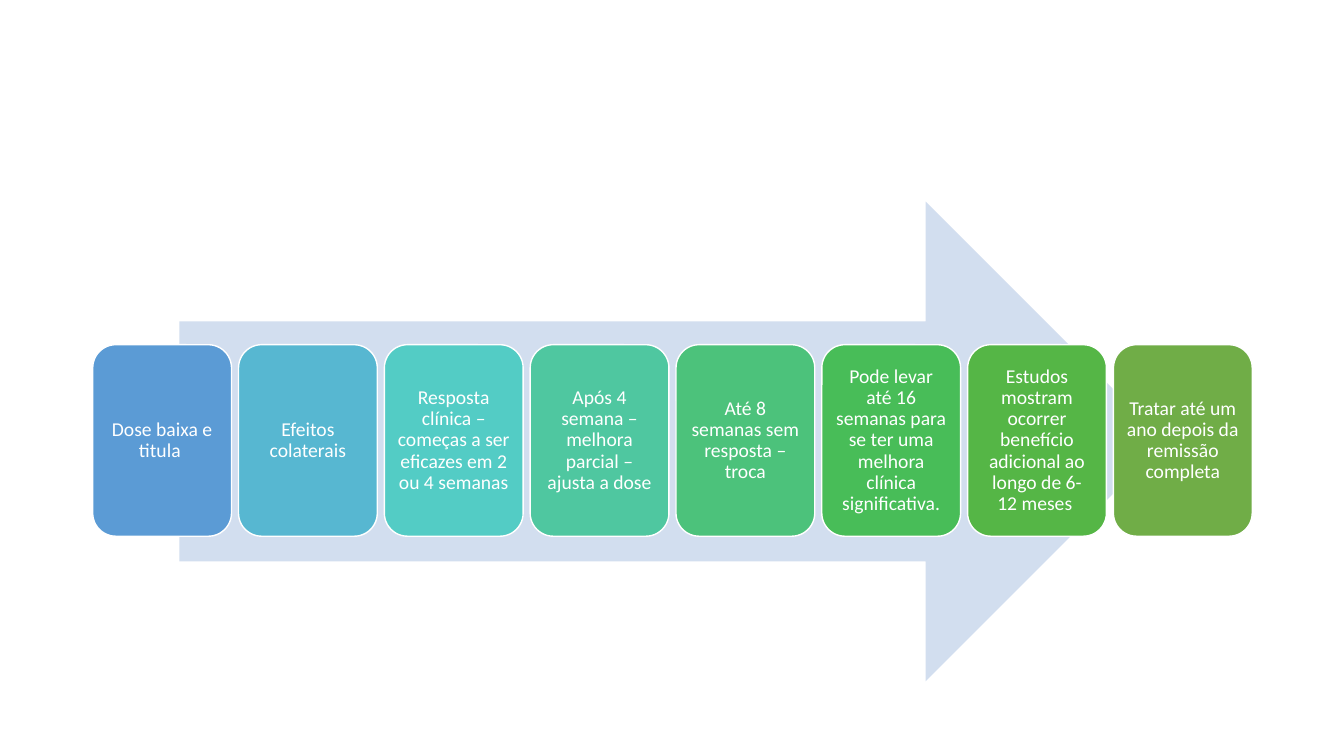
from dataclasses import dataclass

from pptx import Presentation
from pptx import util as u
from pptx.dml.color import RGBColor
from pptx.enum import shapes, text


@dataclass(frozen=True)
class Theme:
    font: str = "Calibri"
    step_size: float = 14
    white: str = "FFFFFF"
    arrow: str = "D2DEEF"
    steps: tuple = ("5B9BD5", "57B7D1", "53CCC5", "4FC7A0",
                    "4CC27B", "48BD58", "55B646", "70AD47")


@dataclass(frozen=True)
class Grid:
    """Equal columns in one row, in inches."""
    left: float = 0.92
    top: float = 3.42
    width: float = 11.5
    height: float = 1.9
    gap: float = 0.07
    columns: int = 8

    def cell(self, column):
        cell_width = (self.width - self.gap * (self.columns - 1)) / self.columns
        return (self.left + column * (cell_width + self.gap), self.top,
                cell_width, self.height)


TREATMENT_STEPS = (
    "Dose baixa e titula ",
    "Efeitos colaterais",
    "Resposta clínica – começas a ser eficazes em 2 ou 4 semanas",
    "Após 4 semana – melhora parcial – ajusta a dose",
    "Até 8 semanas sem resposta – troca",
    "Pode levar até 16 semanas para se ter uma melhora clínica significativa.",
    "Estudos mostram ocorrer benefício adicional ao longo de 6- 12 meses ",
    "Tratar até um ano depois da remissão completa",
)


def apply(target, formats):
    for name, value in formats.items():
        setattr(target, name, value)


class TimelineSlide:
    def __init__(self, deck, theme, grid):
        self.theme, self.grid = theme, grid
        slide = deck.slides.add_slide(deck.slide_layouts[6])
        self.timeline = slide.shapes.add_group_shape().shapes

    def block(self, preset, box, color):
        block = self.timeline.add_shape(preset, *map(u.Inches, box))
        block.shadow.inherit = False
        block.fill.solid()
        block.fill.fore_color.rgb = RGBColor.from_string(color)
        block.line.fill.background()
        return block

    def arrow(self):
        self.block(shapes.MSO_SHAPE.RIGHT_ARROW, (1.78, 2, 9.78, 4.76),
                   self.theme.arrow)

    def step(self, column, wording):
        theme = self.theme
        white = RGBColor.from_string(theme.white)
        card = self.block(shapes.MSO_SHAPE.ROUNDED_RECTANGLE,
                          self.grid.cell(column), theme.steps[column])
        card.line.color.rgb = white
        card.line.width = u.Pt(1)

        frame = card.text_frame
        margins = dict.fromkeys(("margin_left", "margin_top", "margin_right",
                                 "margin_bottom"), u.Inches(0.06))
        apply(frame, {"word_wrap": True,
                      "vertical_anchor": text.MSO_ANCHOR.MIDDLE, **margins})
        paragraph = frame.paragraphs[0]
        apply(paragraph, {"alignment": text.PP_ALIGN.CENTER, "line_spacing": 0.9})
        label = paragraph.add_run()
        label.text = wording
        apply(label.font, {"name": theme.font, "size": u.Pt(theme.step_size)})
        label.font.color.rgb = white


def main():
    deck = Presentation()
    apply(deck, {"slide_width": u.Inches(13.33), "slide_height": u.Inches(7.5)})
    treatment = TimelineSlide(deck, Theme(), Grid())
    treatment.arrow()
    for column, wording in enumerate(TREATMENT_STEPS):
        treatment.step(column, wording)
    deck.save("out.pptx")


if __name__ == "__main__":
    main()
